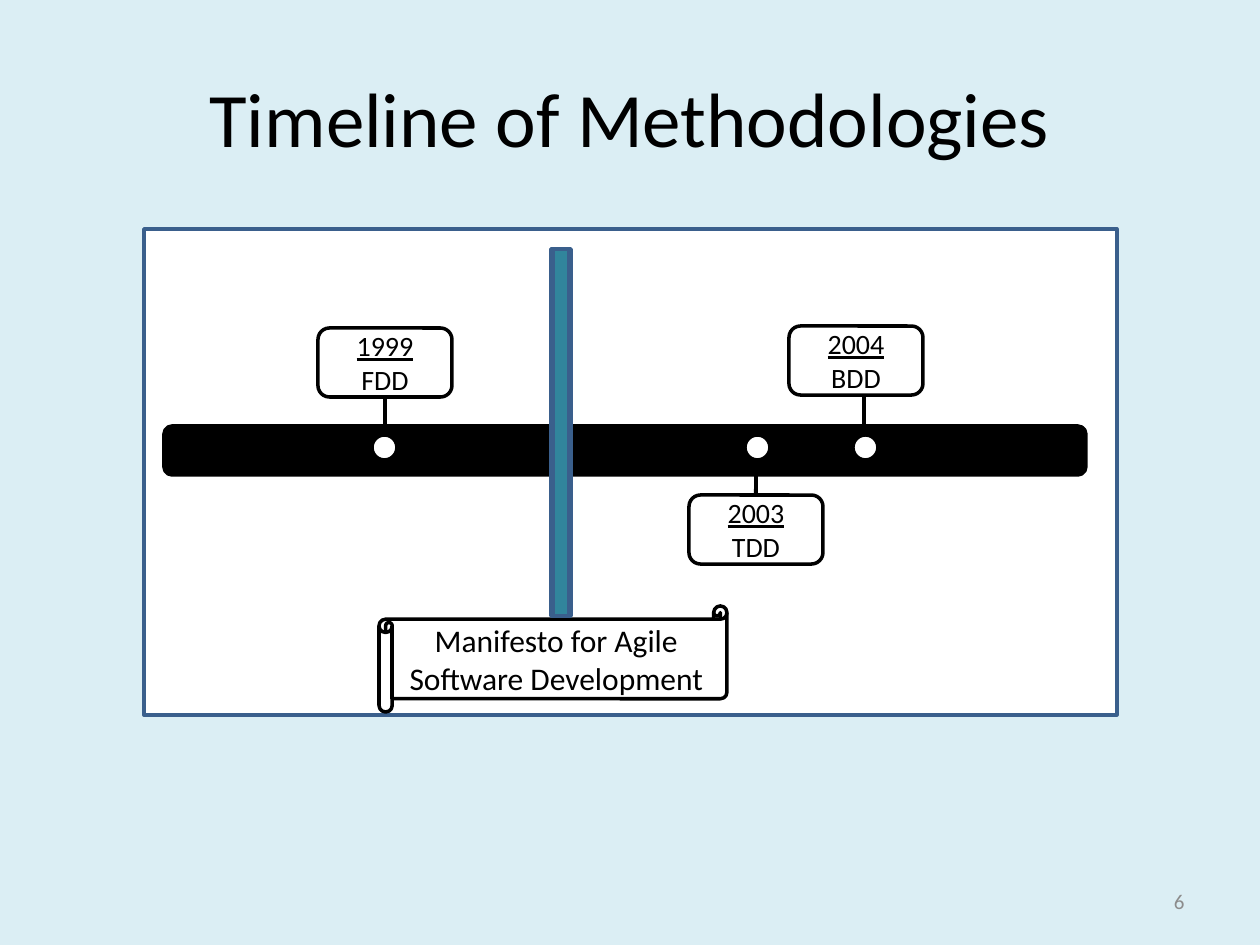
from dataclasses import dataclass

from lxml import etree
from pptx import Presentation
from pptx.dml.color import RGBColor
from pptx.enum.shapes import MSO_CONNECTOR, MSO_SHAPE
from pptx.enum.text import MSO_ANCHOR, PP_ALIGN
from pptx.oxml.ns import qn
from pptx.util import Emu, Pt

EMU_PER_PX = 914400 / 126
FONT = "Calibri"
COLORS = {
    "background": "DBEEF4",
    "ink": "000000",
    "paper": "FFFFFF",
    "border": "3A5F8C",
    "divider": "31859C",
    "muted": "8C8C8C",
}

RECTANGLE = MSO_SHAPE.RECTANGLE
ROUNDED = MSO_SHAPE.FLOWCHART_ALTERNATE_PROCESS
OVAL = MSO_SHAPE.OVAL
SCROLL = MSO_SHAPE.HORIZONTAL_SCROLL
DIVIDER = MSO_SHAPE.FLOWCHART_PREDEFINED_PROCESS
STRAIGHT = MSO_CONNECTOR.STRAIGHT
MIDDLE = MSO_ANCHOR.MIDDLE
CENTER, RIGHT = PP_ALIGN.CENTER, PP_ALIGN.RIGHT
TOP_SITE, BOTTOM_SITE = 0, 2

LABEL_WIDTH, LABEL_HEIGHT = 134, 69
DOT_SIZE, DOT_TOP = 25, 435


@dataclass(frozen=True)
class Area:
    left: int
    top: int
    width: int
    height: int


@dataclass(frozen=True)
class Milestone:
    year: str
    method: str
    left: int
    top: int
    dot_left: int
    stem_x: int
    stem_end: int
    joined: bool = True

    @property
    def above(self) -> bool:
        return self.top < DOT_TOP


MILESTONES = [
    Milestone("2003", "TDD", 689, 495, 745, 756, 460),
    Milestone("2004", "BDD", 789, 326, 853, 864, 432, joined=False),
    Milestone("1999", "FDD", 318, 328, 372, 385, 430),
]


def px(value: int) -> Emu:
    return Emu(round(value * EMU_PER_PX))


def place(area: Area) -> tuple:
    return px(area.left), px(area.top), px(area.width), px(area.height)


def color(name: str) -> RGBColor:
    return RGBColor.from_string(COLORS[name])


def write(box, text: str, *, size: int, ink: str = "ink", align=CENTER,
          underline_first: bool = False) -> None:
    """Fill a box with one paragraph per line of text."""
    frame = box.text_frame
    frame.word_wrap = True
    frame.vertical_anchor = MIDDLE
    for index, line in enumerate(text.split("\n")):
        para = frame.add_paragraph() if index else frame.paragraphs[0]
        para.alignment = align
        span = para.add_run()
        span.text = line
        span.font.name = FONT
        span.font.size = Pt(size)
        span.font.color.rgb = color(ink)
        if underline_first and index == 0:
            span.font.underline = True


def add_text(page, area: Area, text: str, **text_format) -> None:
    write(page.shapes.add_textbox(*place(area)), text, **text_format)


def add_box(page, kind, area: Area, *, fill: str | None, line: str = "ink"):
    box = page.shapes.add_shape(kind, *place(area))
    box.shadow.inherit = False
    if fill is None:
        box.fill.background()
    else:
        box.fill.solid()
        box.fill.fore_color.rgb = color(fill)
    box.line.color.rgb = color(line)
    box.line.width = Pt(2)
    return box


def add_label(page, item: Milestone):
    area = Area(item.left, item.top, LABEL_WIDTH, LABEL_HEIGHT)
    label = add_box(page, ROUNDED, area, fill="paper")
    write(label, f"{item.year}\n{item.method}", size=16, underline_first=True)
    return label


def add_stem(page, item: Milestone, label) -> None:
    """Draw the line from a label to the timeline bar."""
    start = item.top + LABEL_HEIGHT if item.above else item.top
    stem = page.shapes.add_connector(
        STRAIGHT, px(item.stem_x), px(start), px(item.stem_x), px(item.stem_end))
    if item.joined:
        stem.begin_connect(label, BOTTOM_SITE if item.above else TOP_SITE)
    stem.line.color.rgb = color("ink")
    stem.line.width = Pt(2.25)
    etree.SubElement(stem._element.spPr, qn("a:effectLst"))


def main() -> None:
    deck = Presentation()
    deck.slide_width, deck.slide_height = px(1260), px(945)
    page = deck.slides.add_slide(deck.slide_layouts[6])
    page.background.fill.solid()
    page.background.fill.fore_color.rgb = color("background")

    add_text(page, Area(63, 38, 1134, 158), "Timeline of Methodologies", size=44)
    add_text(page, Area(903, 876, 294, 50), "6", size=12, ink="muted", align=RIGHT)

    add_box(page, RECTANGLE, Area(144, 229, 973, 486), fill="paper", line="border")
    add_box(page, ROUNDED, Area(164, 426, 922, 49), fill="ink")
    for item in MILESTONES:
        add_box(page, OVAL, Area(item.dot_left, DOT_TOP, DOT_SIZE, DOT_SIZE),
                fill="paper")
    for item in MILESTONES:
        add_stem(page, item, add_label(page, item))

    manifesto = add_box(page, SCROLL, Area(379, 606, 348, 106), fill=None)
    write(manifesto, "Manifesto for Agile Software Development", size=18)
    add_box(page, DIVIDER, Area(551, 249, 20, 367), fill="divider", line="border")

    deck.save("out.pptx")


if __name__ == "__main__":
    main()
